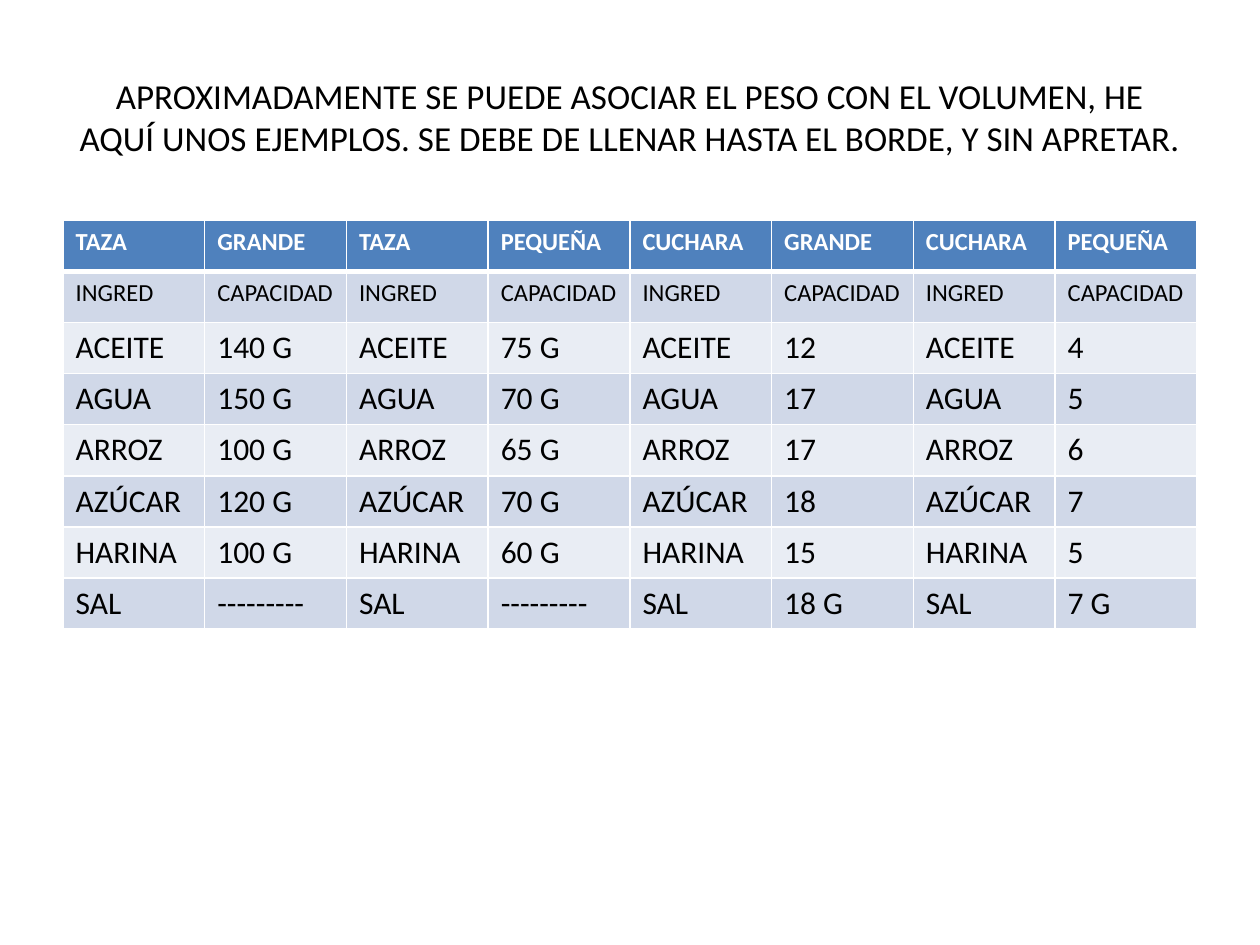
from dataclasses import dataclass

from lxml import etree
from pptx import Presentation
from pptx import util as u
from pptx.dml.color import RGBColor
from pptx.enum import text
from pptx.oxml import ns


@dataclass(frozen=True)
class Theme:
    font: str = "Calibri"
    ink: str = "000000"
    white: str = "FFFFFF"
    head: str = "4F81BD"
    bands: tuple = ("E9EDF4", "D0D8E8")
    title: int = 20
    label: int = 14
    body: int = 18
    thin: int = 1
    thick: int = 3


class Deck:
    """Holds the theme and the current slide."""

    def __init__(self, theme):
        self.theme = theme
        self.prs = Presentation()
        self.prs.slide_width = u.Inches(10)
        self.prs.slide_height = u.Inches(7.5)
        self.slide = self.prs.slides.add_slide(self.prs.slide_layouts[5])

    def label(self, frame, words, size, color, bold=False):
        """Put styled words in a text frame."""
        frame.text = words
        font = frame.paragraphs[0].runs[0].font
        style = {"name": self.theme.font, "size": u.Pt(size), "bold": bold}
        for key, value in style.items():
            setattr(font, key, value)
        font.color.rgb = RGBColor.from_string(color)

    def title(self, words, left, top, width, height):
        shape = self.slide.shapes.title
        place = {"left": left, "top": top, "width": width, "height": height}
        for key, value in place.items():
            setattr(shape, key, u.Inches(value))
        frame = shape.text_frame
        self.label(frame, words, self.theme.title, self.theme.ink)
        frame.vertical_anchor = text.MSO_ANCHOR.MIDDLE
        frame.paragraphs[0].alignment = text.PP_ALIGN.CENTER

    def border(self, cell, widths):
        """Draw cell borders; widths maps L, R, T and B to points."""
        props = cell._tc.get_or_add_tcPr()
        for side, width in widths.items():
            line = etree.SubElement(props, ns.qn(f"a:ln{side}"), w=str(u.Pt(width)))
            fill = etree.SubElement(line, ns.qn("a:solidFill"))
            etree.SubElement(fill, ns.qn("a:srgbClr"), val=self.theme.white)

    def table(self, rows, left, top, width, height):
        """Add a banded table whose first two rows are headings."""
        look = self.theme
        area = [u.Inches(n) for n in (left, top, width, height)]
        grid = self.slide.shapes.add_table(len(rows), len(rows[0]), *area).table
        for r, row in enumerate(rows):
            head = r == 0
            size = look.label if r < 2 else look.body
            color = look.white if head else look.ink
            back = look.head if head else look.bands[r % 2]
            widths = {
                "L": look.thin,
                "R": look.thin,
                "T": look.thick if r == 1 else look.thin,
                "B": look.thick if head else look.thin,
            }
            for c, words in enumerate(row):
                cell = grid.cell(r, c)
                self.label(cell.text_frame, words, size, color, head)
                self.border(cell, widths)
                cell.fill.solid()
                cell.fill.fore_color.rgb = RGBColor.from_string(back)


TITLE = (
    "APROXIMADAMENTE SE PUEDE ASOCIAR EL PESO CON EL VOLUMEN, HE AQUÍ UNOS "
    "EJEMPLOS. SE DEBE DE LLENAR HASTA EL BORDE, Y SIN APRETAR."
)
TOOLS = ["TAZA", "GRANDE", "TAZA", "PEQUEÑA",
         "CUCHARA", "GRANDE", "CUCHARA", "PEQUEÑA"]
DASH = "-" * 9
FOODS = {
    "INGRED": ["CAPACIDAD"] * 4,
    "ACEITE": ["140 G", "75 G", "12", "4"],
    "AGUA": ["150 G", "70 G", "17", "5"],
    "ARROZ": ["100 G", "65 G", "17", "6"],
    "AZÚCAR": ["120 G", "70 G", "18", "7"],
    "HARINA": ["100 G", "60 G", "15", "5"],
    "SAL": [DASH, DASH, "18 G", "7 G"],
}


def main():
    deck = Deck(Theme())
    deck.title(TITLE, 0.5, 0.3, 9, 1.25)
    rows = [[word for load in loads for word in (food, load)]
            for food, loads in FOODS.items()]
    deck.table([TOOLS] + rows, 0.5, 1.75, 9, 3.24)
    deck.prs.save("out.pptx")


if __name__ == "__main__":
    main()
